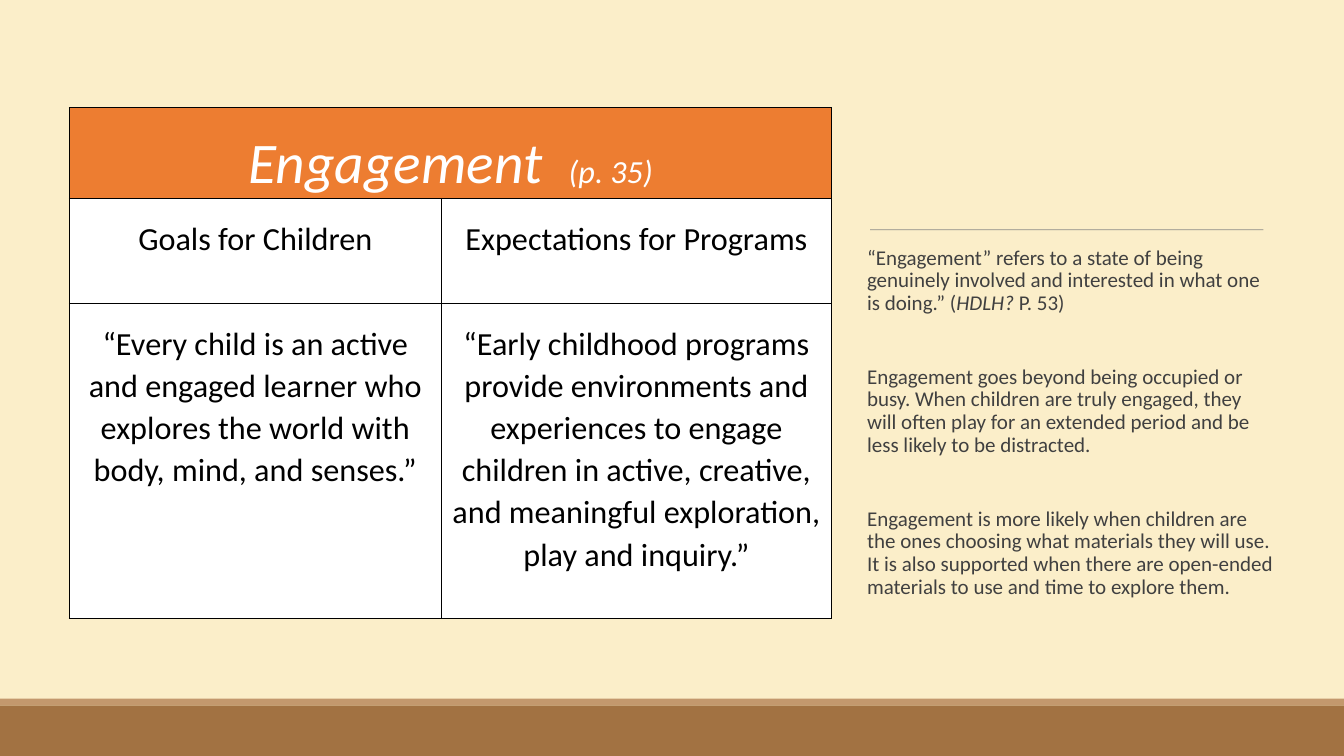
import pptx
import pptx.util
import pptx.dml.color
import pptx.enum.shapes
import pptx.enum.text
import pptx.oxml
import pptx.oxml.ns

FONT = "Calibri"
W, H = 13.33, 7.5
NS = pptx.oxml.ns.nsdecls("a")


def inch(v):
    return pptx.util.Inches(v)


def color(hex_code):
    return pptx.dml.color.RGBColor.from_string(hex_code)


def add_text(p, text, size=15, fill="404040", italic=False):
    r = p.add_run()
    r.text = text
    r.font.name = FONT
    r.font.size = pptx.util.Pt(size)
    r.font.italic = italic
    r.font.color.rgb = color(fill)


def add_band(s, x, y, w, h, fill):
    sp = s.shapes.add_shape(pptx.enum.shapes.MSO_SHAPE.RECTANGLE,
                            inch(x), inch(y), inch(w), inch(h))
    sp.shadow.inherit = False
    sp.fill.solid()
    sp.fill.fore_color.rgb = color(fill)
    sp.line.fill.background()


def add_footer(s, x, y, w, h):
    strip = h / 8
    add_band(s, x, y, w, strip, "C3986D")
    add_band(s, x, y + strip, w, h - strip, "A27242")


def format_cell(cell, runs, fill, top, anchor):
    cell.fill.solid()
    cell.fill.fore_color.rgb = color(fill)
    cell.margin_left = cell.margin_right = inch(0.08)
    cell.margin_top, cell.margin_bottom = inch(top), 0
    cell.vertical_anchor = anchor
    p = cell.text_frame.paragraphs[0]
    p.alignment = pptx.enum.text.PP_ALIGN.CENTER
    p.line_spacing = 1.07
    for text, fmt in runs:
        add_text(p, text, **fmt)


def add_borders(cell):
    tc_pr = cell._tc.get_or_add_tcPr()
    for i, side in enumerate(("lnL", "lnR", "lnT", "lnB")):
        tc_pr.insert(i, pptx.oxml.parse_xml(
            f'<a:{side} {NS} w="12700"><a:solidFill><a:srgbClr val="000000"/>'
            f'</a:solidFill><a:prstDash val="solid"/></a:{side}>'))


def add_goals_table(s, x, y, w, h):
    col_widths = (3.69, w - 3.69)
    row_heights = (0.9, 1.04, h - 1.94)
    anchors = pptx.enum.text.MSO_ANCHOR
    body = (
        ("Goals for Children", "Expectations for Programs"),
        ("“Every child is an active and engaged learner who explores the "
         "world with body, mind, and senses.”",
         "“Early childhood programs provide environments and experiences to "
         "engage children in active, creative, and meaningful exploration, "
         "play and inquiry.”"),
    )
    table = s.shapes.add_table(3, 2, inch(x), inch(y), inch(w), inch(h)).table
    table.first_row = table.horz_banding = False
    for col, width in zip(table.columns, col_widths):
        col.width = inch(width)
    for row, height in zip(table.rows, row_heights):
        row.height = inch(height)

    # Heading across both columns
    title = table.cell(0, 0)
    title.merge(table.cell(0, 1))
    white = dict(fill="FFFFFF", italic=True)
    format_cell(title, [("Engagement  ", dict(size=41, **white)),
                        ("(p. 35)", dict(size=23, **white))],
                "ED7D31", 0, anchors.BOTTOM)

    # Column heads and statements
    for i, texts in enumerate(body, 1):
        for j, text in enumerate(texts):
            format_cell(table.cell(i, j), [(text, dict(size=23, fill="000000"))],
                        "FFFFFF", 0.18, anchors.TOP)
    for cell in table.iter_cells():
        add_borders(cell)


def add_side_notes(s, x, y, w, h):
    # Thin rule above the notes
    rule = s.shapes.add_connector(pptx.enum.shapes.MSO_CONNECTOR.STRAIGHT,
                                  inch(x + 0.03), inch(y),
                                  inch(x + 3.93), inch(y))
    rule.line.width = pptx.util.Pt(0.5)
    rule.line.color.rgb = color("808080")
    rule.line._ln.find(".//" + pptx.oxml.ns.qn("a:srgbClr")).append(
        pptx.oxml.parse_xml(f'<a:alpha {NS} val="90000"/>'))
    rule._element.spPr.append(pptx.oxml.parse_xml(f"<a:effectLst {NS}/>"))

    # Notes
    notes = (
        (("“Engagement” refers to a state of being genuinely involved and "
          "interested in what one is doing.” (", False),
         ("HDLH? ", True), ("P. 53)", False)),
        (("Engagement goes beyond being occupied or busy. When children are "
          "truly engaged, they will often play for an extended period and be "
          "less likely to be distracted.", False),),
        (("Engagement is more likely when children are the ones choosing what "
          "materials they will use. It is also supported when there are "
          "open-ended materials to use and time to explore them.", False),),
    )
    gap = 0.12
    tf = s.shapes.add_textbox(inch(x), inch(y + gap), inch(w),
                              inch(h - gap)).text_frame
    tf.word_wrap = True
    tf.margin_left = tf.margin_right = 0
    for i, runs in enumerate(notes):
        p = tf.add_paragraph() if i else tf.paragraphs[0]
        p.line_spacing = 0.9
        p.space_before = pptx.util.Pt(36.5 if i else 0)
        for text, italic in runs:
            add_text(p, text, italic=italic)


def main():
    prs = pptx.Presentation()
    prs.slide_width, prs.slide_height = inch(W), inch(H)
    s = prs.slides.add_slide(prs.slide_layouts[6])
    s.background.fill.solid()
    s.background.fill.fore_color.rgb = color("FBEEC9")
    add_side_notes(s, 8.6, 2.28, 4.04, 4.13)
    add_footer(s, 0, 6.93, W, H - 6.93)
    add_goals_table(s, 0.69, 1.07, 7.56, 5.07)
    prs.save("out.pptx")


if __name__ == "__main__":
    main()
